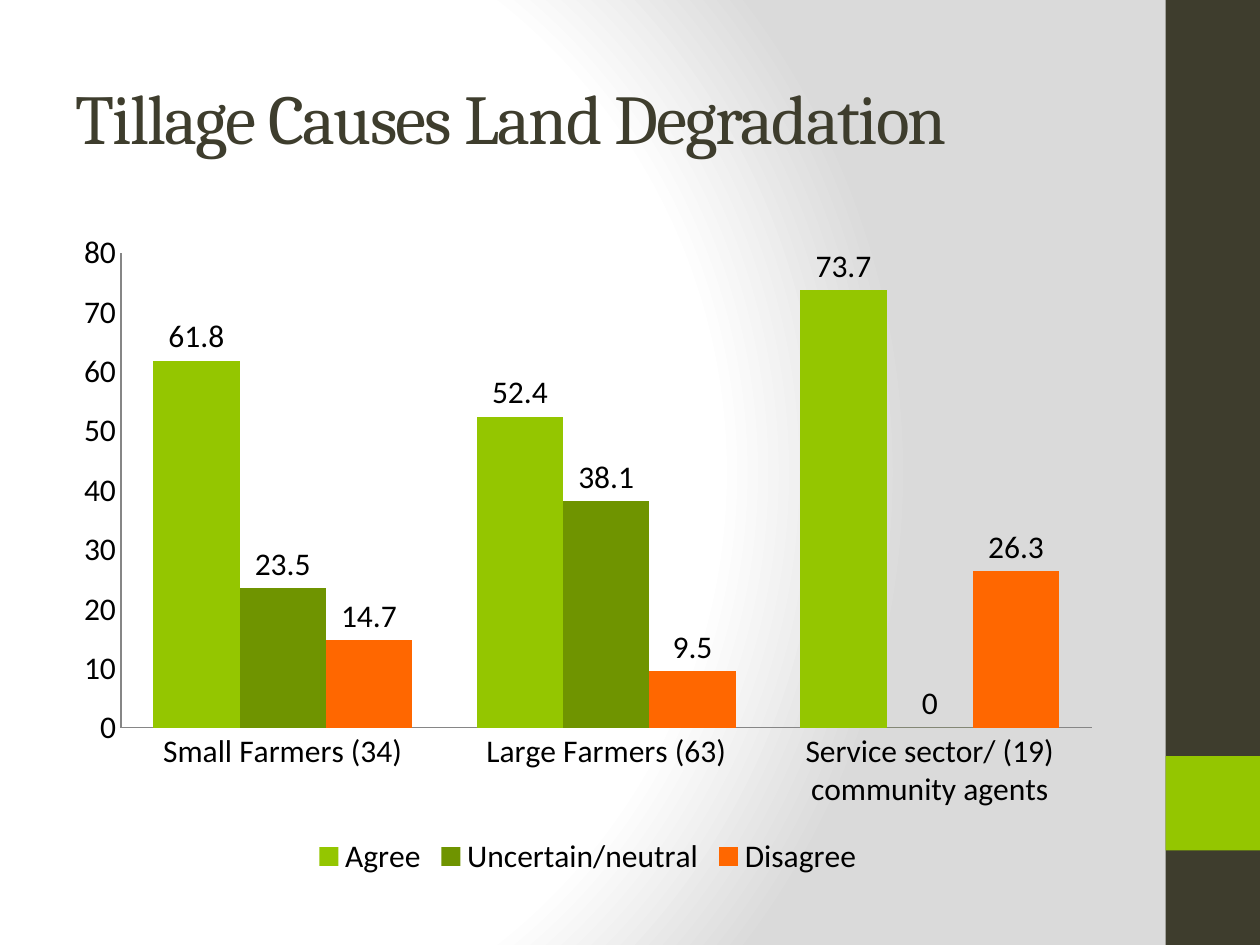
"""Build a slide with a clustered column chart on tillage and land degradation."""
from pptx import Presentation
from pptx.chart.data import CategoryChartData
from pptx.dml.color import RGBColor
from pptx.enum.chart import XL_CHART_TYPE, XL_LABEL_POSITION, XL_LEGEND_POSITION, XL_TICK_MARK
from pptx.enum.shapes import MSO_SHAPE
from pptx.enum.text import MSO_ANCHOR
from pptx.oxml import parse_xml
from pptx.util import Inches, Pt

COLUMN = XL_CHART_TYPE.COLUMN_CLUSTERED
OUTSIDE = XL_LABEL_POSITION.OUTSIDE_END
BOTTOM = XL_LEGEND_POSITION.BOTTOM
NO_TICK = XL_TICK_MARK.NONE
RECT = MSO_SHAPE.RECTANGLE
MIDDLE = MSO_ANCHOR.MIDDLE

DARK = RGBColor(0x3E, 0x3D, 0x2D)
LIME = RGBColor(0x94, 0xC6, 0x00)
MOSS = RGBColor(0x6F, 0x94, 0x00)
ORANGE = RGBColor(0xFF, 0x67, 0x00)
BLACK = RGBColor(0, 0, 0)
GREY = RGBColor(0x86, 0x86, 0x86)
WHITE = RGBColor(0xFF, 0xFF, 0xFF)
SILVER = RGBColor(0xDA, 0xDA, 0xDA)

TITLE = "Tillage Causes Land Degradation"
GROUPS = ["Small Farmers (34)", "Large Farmers (63)", "Service sector/ (19) community agents"]
SERIES = [
    ("Agree", LIME, (61.8, 52.4, 73.7)),
    ("Uncertain/neutral", MOSS, (23.5, 38.1, 0)),
    ("Disagree", ORANGE, (14.7, 9.5, 26.3)),
]
STOPS = [(0, WHITE), (75, WHITE), (100, SILVER)]

WIDE, HIGH = 10, 7.5
BAND = 0.075 * WIDE
EDGE = WIDE - BAND
LEFT, BODY = 0.05 * WIDE, 8.33
NS = "http://schemas.openxmlformats.org/drawingml/2006/main"


def place(*box):
    return [Inches(side) for side in box]


def set_back(slide):
    slide.background.fill.solid()
    stops = "".join(
        f'<a:gs pos="{pos * 1000}"><a:srgbClr val="{tint}"/></a:gs>' for pos, tint in STOPS)
    grad = parse_xml(
        f'<a:gradFill xmlns:a="{NS}" rotWithShape="1"><a:gsLst>{stops}</a:gsLst>'
        '<a:path path="circle"><a:fillToRect l="20000" t="50000" r="100000" b="50000"/>'
        '</a:path></a:gradFill>')
    solid = slide.background._cSld.find(f".//{{{NS}}}solidFill")
    solid.getparent().replace(solid, grad)


def add_block(slide, box, color):
    block = slide.shapes.add_shape(RECT, *place(*box))
    block.shadow.inherit = False
    block.fill.solid()
    block.fill.fore_color.rgb = color
    block.line.fill.background()


def add_text(slide, text, box, font="Calibri", size=18, color=BLACK, space=0):
    frame = slide.shapes.add_textbox(*place(*box)).text_frame
    frame.word_wrap = True
    frame.vertical_anchor = MIDDLE
    run = frame.paragraphs[0].add_run()
    run.text = text
    run.font.name, run.font.size = font, Pt(size)
    run.font.color.rgb = color
    run.font._element.set("spc", str(space * 100))


def add_columns(slide, box):
    data = CategoryChartData()
    data.categories = GROUPS
    for name, _, values in SERIES:
        data.add_series(name, values)
    chart = slide.shapes.add_chart(COLUMN, *place(*box), data).chart
    chart.has_title = False
    chart.font.name, chart.font.size = "Calibri", Pt(18)
    chart.font.color.rgb = BLACK
    chart.has_legend = True
    chart.legend.position = BOTTOM
    chart.legend.include_in_layout = False
    for axis in (chart.category_axis, chart.value_axis):
        axis.has_major_gridlines = False
        axis.major_tick_mark = axis.minor_tick_mark = NO_TICK
        axis.format.line.color.rgb = GREY
    scale = chart.value_axis
    scale.minimum_scale, scale.maximum_scale, scale.major_unit = 0, 80, 10
    plot = chart.plots[0]
    plot.gap_width, plot.overlap = 75, 0
    plot.vary_by_categories = False
    for series, (_, color, _) in zip(plot.series, SERIES):
        series.invert_if_negative = False
        series.format.fill.solid()
        series.format.fill.fore_color.rgb = color
        labels = series.data_labels
        labels.show_value = True
        labels.position = OUTSIDE


def main():
    deck = Presentation()
    deck.slide_width, deck.slide_height = place(WIDE, HIGH)
    slide = deck.slides.add_slide(deck.slide_layouts[6])
    set_back(slide)
    add_block(slide, (EDGE, 0, BAND, HIGH), DARK)
    add_block(slide, (EDGE, 0.8 * HIGH, BAND, BAND), LIME)
    add_text(slide, TITLE, (LEFT, 0.3, BODY, 1.25),
             font="Cambria", size=40, color=DARK, space=-1)
    add_columns(slide, (LEFT, 1.75, BODY, 0.7 * HIGH))
    deck.save("out.pptx")


if __name__ == "__main__":
    main()
